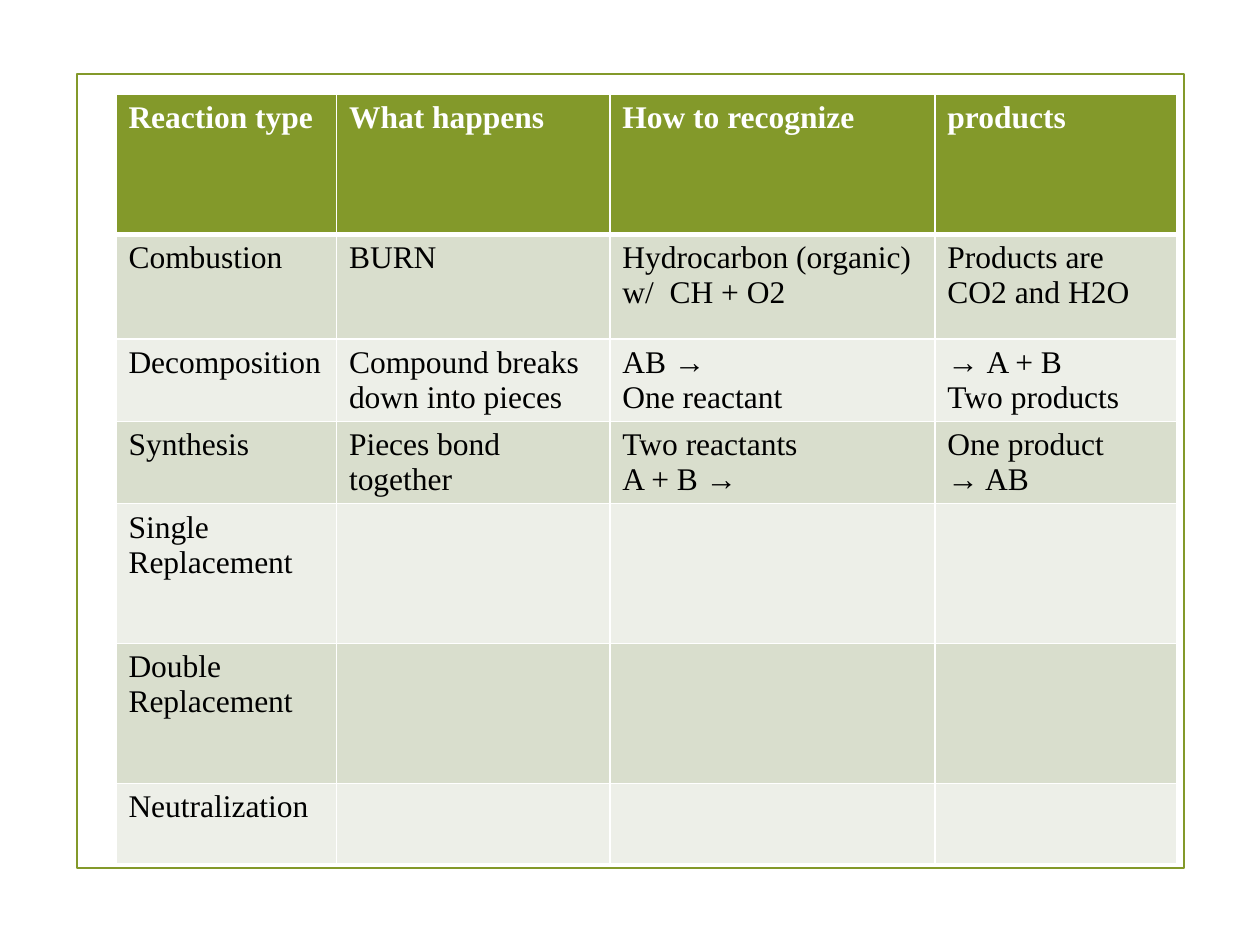
from pptx import Presentation
from pptx.dml.color import RGBColor as RGB
from pptx.enum.shapes import MSO_SHAPE as SHAPE
from pptx.oxml import parse_xml
from pptx.oxml.ns import nsdecls
from pptx.util import Inches, Pt

THEME = {
    "green": "83992A",
    "bands": ("D9DECD", "EDEFE8"),
    "white": "FFFFFF",
    "black": "000000",
    "font": "Times New Roman",
    "size": 18,
    "frame_line": 1.25,
    "rule": 1,
    "header_rule": 3,
}
ARROW = "→ "  # a paragraph starting with this in BULLETED gets a real bullet
COLUMNS = [1.75, 2.17, 2.58, 1.92]
ROWS = [1.11, 0.83, 0.65, 0.65, 1.11, 1.11, 0.64]
REACTIONS = [
    ["Reaction type", "What happens", "How to recognize", "products"],
    ["Combustion", "BURN", "Hydrocarbon (organic) w/  CH + O2", "Products are CO2 and H2O"],
    ["Decomposition", "Compound breaks down into pieces", "AB →\nOne reactant",
     "A + B\nTwo products"],
    ["Synthesis", "Pieces bond together", "Two reactants\nA + B →", "One product\n→ AB"],
    ["Single Replacement", "", "", ""],
    ["Double Replacement", "", "", ""],
    ["Neutralization", "", "", ""],
]
ARROW_BULLET = (2, 3)  # row and column whose first line has an arrow bullet


def add_border(cell, side, points):
    cell._tc.get_or_add_tcPr().append(parse_xml(
        f'<a:ln{side} {nsdecls("a")} w="{Pt(points)}"><a:solidFill>'
        f'<a:srgbClr val="{THEME["white"]}"/></a:solidFill></a:ln{side}>'))


prs = Presentation()
prs.slide_width, prs.slide_height = Inches(10), Inches(7.5)
slide = prs.slides.add_slide(prs.slide_layouts[6])

# Frame around the slide content
frame = slide.shapes.add_shape(SHAPE.RECTANGLE, Inches(0.61), Inches(0.59),
                               Inches(8.79), Inches(6.3))
frame.shadow.inherit = False
frame.fill.background()
frame.line.color.rgb = RGB.from_string(THEME["green"])
frame.line.width = Pt(THEME["frame_line"])

# Table of reaction types
reactions = slide.shapes.add_table(
    len(ROWS), len(COLUMNS), Inches(0.92), Inches(0.75),
    Inches(sum(COLUMNS)), Inches(sum(ROWS))).table
reactions.horz_banding = False
for column, width in zip(reactions.columns, COLUMNS):
    column.width = Inches(width)
for row, height in zip(reactions.rows, ROWS):
    row.height = Inches(height)

# Cell borders, fills and text
for r, entries in enumerate(REACTIONS):
    header = r == 0
    fill = THEME["green"] if header else THEME["bands"][(r - 1) % 2]
    rules = {
        "L": THEME["rule"],
        "R": THEME["rule"],
        "T": THEME["header_rule" if r == 1 else "rule"],
        "B": THEME["header_rule" if header else "rule"],
    }
    for c, entry in enumerate(entries):
        cell = reactions.cell(r, c)
        for side, points in rules.items():
            add_border(cell, side, points)
        cell.fill.solid()
        cell.fill.fore_color.rgb = RGB.from_string(fill)
        cell.text_frame.text = entry
        for paragraph in cell.text_frame.paragraphs:
            for run in paragraph.runs:
                run.font.name = THEME["font"]
                run.font.size = Pt(THEME["size"])
                run.font.bold = header
                run.font.color.rgb = RGB.from_string(THEME["white" if header else "black"])

# Arrow bullet in front of the decomposition products
bullet = reactions.cell(*ARROW_BULLET).text_frame.paragraphs[0]._p.get_or_add_pPr()
bullet.set("marL", str(Inches(0.31)))
bullet.set("indent", str(-Inches(0.31)))
bullet.append(parse_xml(f'<a:buFont {nsdecls("a")} typeface="{THEME["font"]}"/>'))
bullet.append(parse_xml(f'<a:buChar {nsdecls("a")} char="{ARROW.strip()}"/>'))

prs.save("out.pptx")
